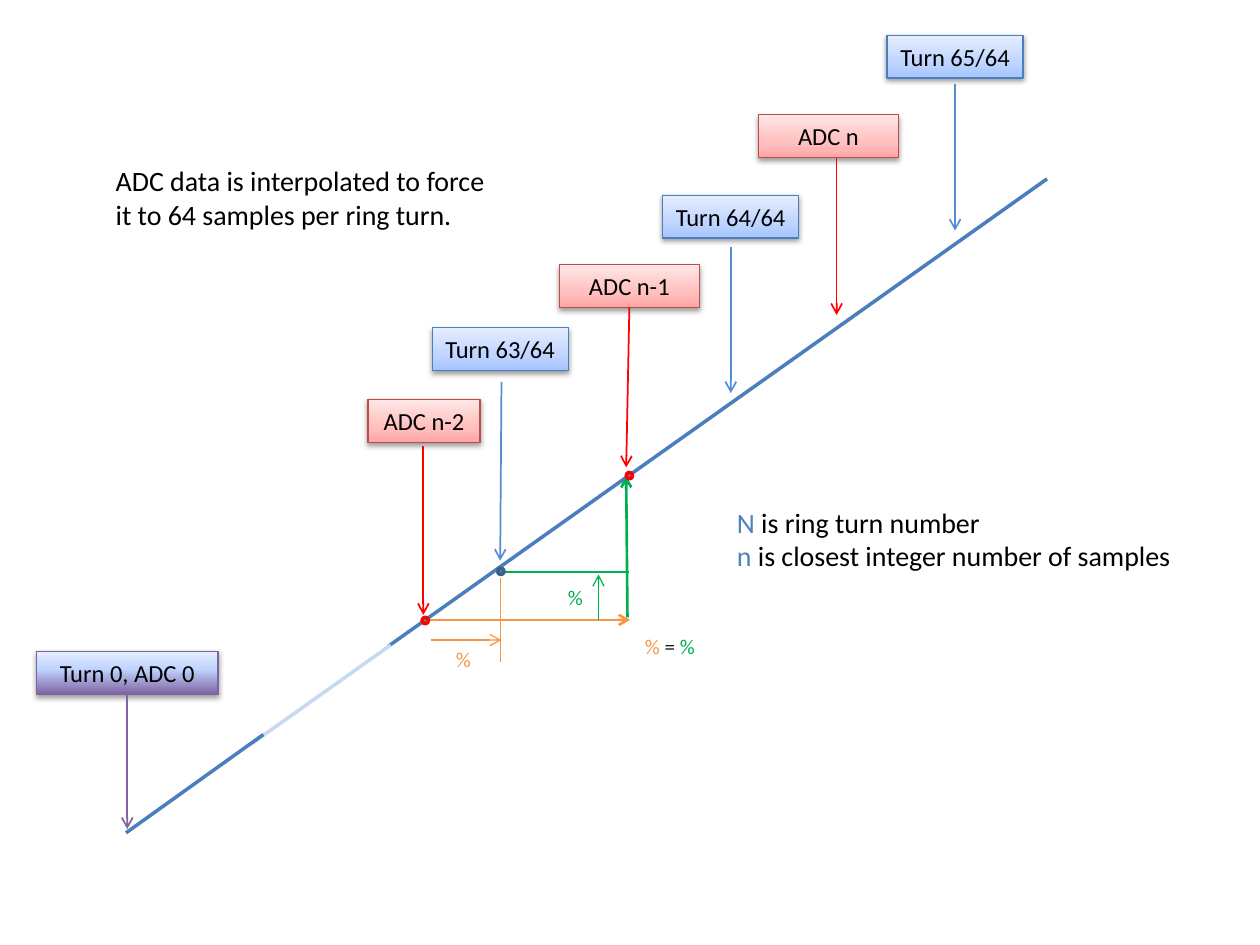
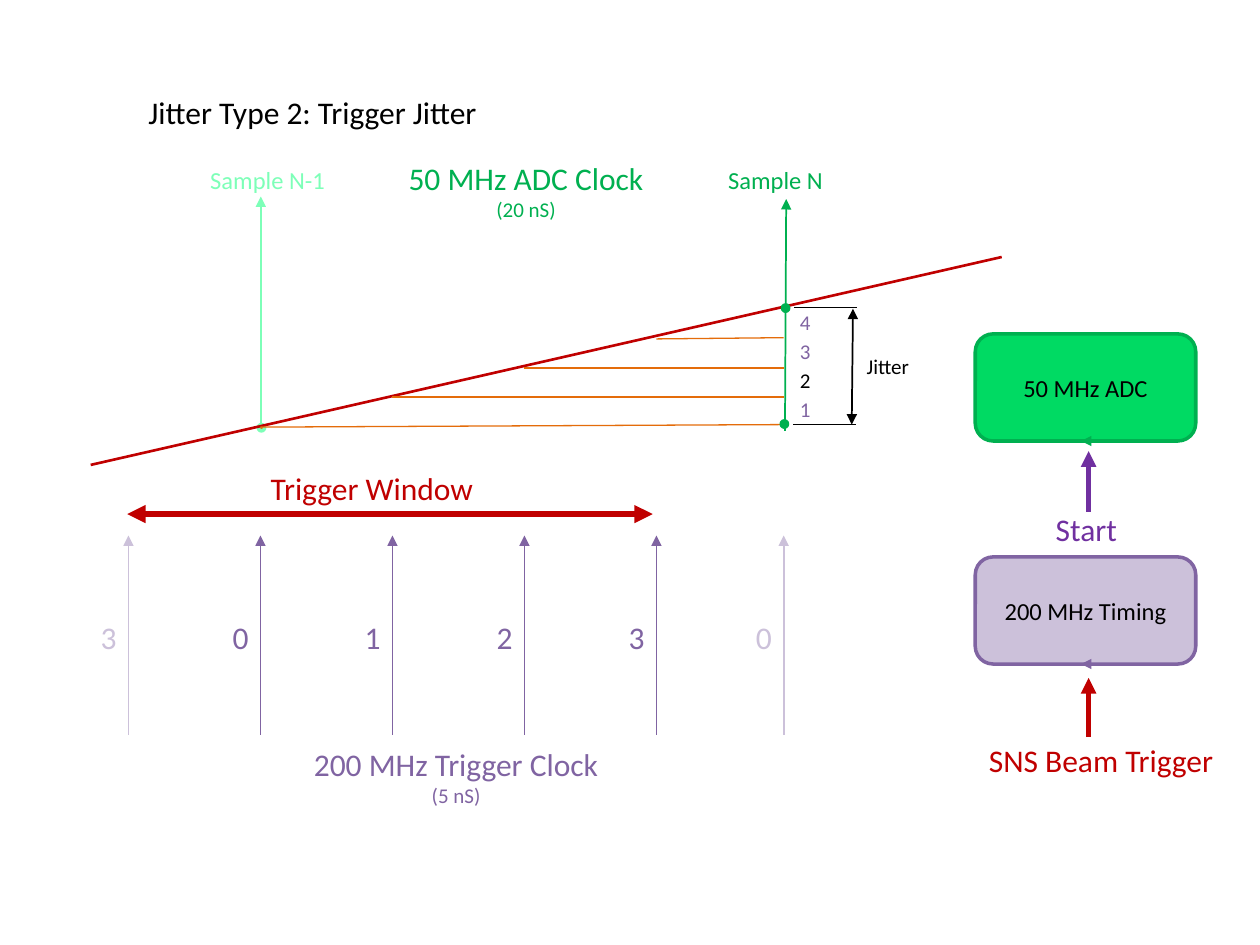
import pptx
import pptx.util
import pptx.dml.color
import pptx.enum.shapes
import pptx.enum.text
import pptx.oxml.ns
from lxml import etree

Inches = pptx.util.Inches
Pt = pptx.util.Pt
RGB = pptx.dml.color.RGBColor
SHAPE = pptx.enum.shapes.MSO_SHAPE
ALIGN = pptx.enum.text.PP_ALIGN
qn = pptx.oxml.ns.qn

# Shared style
FONT = "Calibri"
BLACK = RGB(0x00, 0x00, 0x00)
INK = RGB(0x1E, 0x1C, 0x11)
BLUE = RGB(0x4F, 0x81, 0xBD)
RAMP_BLUE = RGB(0x4B, 0x7E, 0xBC)
ARROW_BLUE = RGB(0x55, 0x8E, 0xD5)
DOT_BLUE = RGB(0x3A, 0x5F, 0x8C)
PALE_BLUE = RGB(0xC6, 0xD9, 0xF1)
RED = RGB(0xFF, 0x00, 0x00)
BOX_RED = RGB(0xBF, 0x4C, 0x48)
DARK_RED = RGB(0xC0, 0x00, 0x00)
ORANGE = RGB(0xF7, 0x96, 0x46)
DARK_ORANGE = RGB(0xE4, 0x6C, 0x0A)
GREEN = RGB(0x00, 0xB0, 0x50)
BRIGHT_GREEN = RGB(0x00, 0xDA, 0x63)
MINT = RGB(0x7D, 0xFF, 0xB8)
PURPLE = RGB(0x80, 0x64, 0xA2)
LILAC = RGB(0xCC, 0xC1, 0xDA)
VIOLET = RGB(0x70, 0x30, 0xA0)
DOT = 0.05

# Slide 1: callout styles are (outline, arrow colour, gradient from the bottom up)
CALLOUT_STYLES = {
    "turn": (RAMP_BLUE, ARROW_BLUE, [(0, "A4C4FF"), (35, "BFD4FF"), (100, "E6EEFF")]),
    "adc": (BOX_RED, RED, [(0, "FFA6A5"), (35, "FFC0BF"), (100, "FFE7E7")]),
    "start": (PURPLE, PURPLE, [(0, "8064A2"), (59, "BFD4FF"), (100, "E6EEFF")]),
}
# text, style, left, top, width, arrow start (None: joined to the box), arrow end
CALLOUTS = [
    ("Turn 0, ADC 0", "start", 0.29, 5.17, 1.44, None, (1.01, 6.58)),
    ("ADC n-2", "adc", 2.92, 3.17, 0.89, (3.36, 3.54), (3.36, 4.88)),
    ("Turn 63/64", "turn", 3.43, 2.6, 1.08, (3.98, 3.03), (3.97, 4.45)),
    ("ADC n-1", "adc", 4.44, 2.1, 1.11, None, (4.97, 3.71)),
    ("Turn 64/64", "turn", 5.26, 1.55, 1.08, (5.8, 1.96), (5.8, 3.12)),
    ("ADC n", "adc", 6.02, 0.91, 1.11, (6.64, 1.25), (6.64, 2.5)),
    ("Turn 65/64", "turn", 7.04, 0.28, 1.08, (7.58, 0.67), (7.58, 1.83)),
]
CALLOUT_HEIGHT = 0.34
# start, end, colour, width, head, tail
RAMP = [
    ((3.08, 5.13), (8.31, 1.42), RAMP_BLUE, 2),
    ((2, 5.9), (3.1, 5.12), PALE_BLUE, 2),
    ((1, 6.61), (2.09, 5.83), RAMP_BLUE, 2),
]
INTERPOLATION = [
    ((3.35, 4.92), (5, 4.92), ORANGE, 1.5, None, "arrow"),
    ((3.42, 5.08), (3.98, 5.08), ORANGE, 0.75, None, "arrow"),
    ((4.75, 4.56), (4.75, 4.92), GREEN, 0.75, "arrow"),
    ((4.97, 3.78), (4.98, 4.9), GREEN, 1.5, "arrow"),
    ((3.97, 4.59), (3.97, 5.25), ORANGE, 0.75),
    ((4, 4.54), (4.99, 4.54), GREEN, 0.75),
]
SAMPLE_DOTS = [
    (3.95, 4.51, BLUE, DOT_BLUE),
    (3.35, 4.9, BLUE, RED),
    (4.97, 3.75, BLUE, RED),
]
# left, top, width, height, paragraphs of (size, runs), alignment
INTERPOLATION_TEXTS = [
    (4.41, 4.59, 0.33, 0.3, [(12, [("%", GREEN)])]),
    (3.52, 5.08, 0.33, 0.3, [(12, [("%", ORANGE)])]),
    (5.02, 4.98, 0.64, 0.3, [(12, [("% ", ORANGE), ("= ", INK), ("%", GREEN)])]),
    (5.75, 3.96, 3.69, 0.64, [
        (16, [("N", BLUE), (" is ring turn number", BLACK)]),
        (16, [("n", BLUE), (" is closest integer number of samples", BLACK)])]),
    (0.82, 1.25, 3.17, 0.64, [
        (16, [("ADC data is interpolated to force", BLACK)]),
        (16, [("it to 64 samples per ring turn.", BLACK)])]),
]

# Slide 2: trigger clock ticks, the last one falling on sample N
TICKS = [("3", LILAC), ("0", PURPLE), ("1", PURPLE),
         ("2", PURPLE), ("3", PURPLE), ("0", LILAC)]
FIRST_TICK, FOURTH_TICK, SAMPLE_N = 1.02, 5.21, 6.22
TICK_TOP, TICK_BOTTOM = 4.25, 5.83
# label, colour, level at the ramp, level at sample N
JITTER_LEVELS = [
    ("1", PURPLE, 3.39, 3.37),
    ("2", BLACK, 3.15, 3.15),
    ("3", PURPLE, 2.92, 2.92),
    ("4", PURPLE, 2.69, 2.68),
]
JITTER_LABEL_TOP, JITTER_LABEL_STEP = 3.1, 0.23
SIGNALS = [
    ((2.07, 3.4), (2.07, 1.56), MINT, 1, None, "triangle"),
    ((0.72, 3.69), (7.95, 2.04), DARK_RED, 1.5),
    ((6.23, 3.42), (6.24, 1.58), GREEN, 1, None, "triangle"),
    ((1.01, 4.08), (5.18, 4.08), DARK_RED, 3.5, "triangle", "triangle"),
    ((6.76, 3.37), (6.77, 2.45), BLACK, 1, "triangle", "triangle"),
    ((6.8, 2.44), (6.3, 2.44), BLACK, 1),
    ((6.79, 3.37), (6.29, 3.37), BLACK, 1),
    ((8.64, 5.85), (8.64, 5.38), DARK_RED, 3, None, "triangle"),
    ((8.64, 4.06), (8.64, 3.58), VIOLET, 3, None, "triangle"),
]
RAMP_START_DOT = (2.05, 3.37, DARK_ORANGE, MINT)
JITTER_DOTS = [(6.21, 2.42, GREEN, GREEN), (6.2, 3.34, GREEN, GREEN)]
# text, top, fill, outline
DEVICES = [
    ("50 MHz ADC", 2.65, BRIGHT_GREEN, GREEN),
    ("200 MHz Timing", 4.42, LILAC, PURPLE),
]
DEVICE_LEFT, DEVICE_WIDTH, DEVICE_HEIGHT = 7.74, 1.75, 0.85
JITTER_TEXTS = [
    (1.08, 0.69, 2.85, 0.4, [(18, [("Jitter Type 2: Trigger Jitter", BLACK)])]),
    (1.57, 1.26, 1.12, 0.34, [(14, [("Sample N-1", MINT)])]),
    (5.68, 1.26, 0.96, 0.34, [(14, [("Sample N", GREEN)])]),
    (3.13, 1.21, 2.09, 0.61, [(18, [("50 MHz ADC Clock", GREEN)]),
                              (12, [("(20 nS)", GREEN)])], ALIGN.CENTER),
    (2.38, 5.86, 2.48, 0.61, [(18, [("200 MHz Trigger Clock", PURPLE)]),
                              (12, [("(5 nS)", PURPLE)])], ALIGN.CENTER),
    (2.05, 3.67, 1.83, 0.4, [(18, [("Trigger Window", DARK_RED)])]),
    (6.78, 2.76, 0.54, 0.3, [(12, [("Jitter", BLACK)])]),
    (8.28, 4, 0.69, 0.4, [(18, [("Start", VIOLET)])]),
    (7.75, 5.83, 2, 0.4, [(18, [("SNS Beam Trigger", DARK_RED)])]),
]


def write(frame, paragraphs, align=ALIGN.LEFT):
    frame.word_wrap = False
    for index, (size, runs) in enumerate(paragraphs):
        paragraph = frame.add_paragraph() if index else frame.paragraphs[0]
        paragraph.alignment = align
        paragraph.font.name = FONT
        paragraph.font.size = Pt(size)
        if len(runs) == 1:
            paragraph.font.color.rgb = runs[0][1]
        for text, color in runs:
            run = paragraph.add_run()
            run.text = text
            if len(runs) > 1:
                run.font.color.rgb = color


def add_text(slide, left, top, width, height, paragraphs, align=ALIGN.LEFT):
    box = slide.shapes.add_textbox(*map(Inches, (left, top, width, height)))
    write(box.text_frame, paragraphs, align)


def add_line(slide, start, end, color, width, head=None, tail=None):
    line = slide.shapes.add_connector(
        pptx.enum.shapes.MSO_CONNECTOR.STRAIGHT, *map(Inches, start + end))
    line.line.color.rgb = color
    line.line.width = Pt(width)
    properties = line.element.spPr
    for tag, arrow in (("a:headEnd", head), ("a:tailEnd", tail)):
        if arrow:
            etree.SubElement(properties.find(qn("a:ln")), qn(tag), type=arrow)
    etree.SubElement(properties, qn("a:effectLst"))
    return line


def add_box(slide, kind, left, top, width, height, fill, outline, weight):
    box = slide.shapes.add_shape(kind, *map(Inches, (left, top, width, height)))
    box.shadow.inherit = False
    if fill is not None:
        box.fill.solid()
        box.fill.fore_color.rgb = fill
    box.line.color.rgb = outline
    box.line.width = Pt(weight)
    return box


def add_dot(slide, left, top, fill, outline):
    add_box(slide, SHAPE.OVAL, left, top, DOT, DOT, fill, outline, 2)


def add_color(parent, tag, color, **attributes):
    holder = etree.SubElement(parent, qn(tag), **attributes)
    return etree.SubElement(holder, qn("a:srgbClr"), val=color)


def add_callout(slide, text, style, left, top, width, start, end):
    outline, arrow_color, stops = CALLOUT_STYLES[style]
    box = add_box(slide, SHAPE.RECTANGLE, left, top, width, CALLOUT_HEIGHT,
                  None, outline, 0.75)
    box.fill.gradient()
    box.fill.gradient_angle = 90
    properties = box.element.spPr
    stop_list = properties.find(".//" + qn("a:gsLst"))
    for stop in list(stop_list):
        stop_list.remove(stop)
    for percent, color in stops:
        add_color(stop_list, "a:gs", color, pos=str(percent * 1000))
    shadow = add_color(properties.find(qn("a:effectLst")), "a:outerShdw", "000000",
                       blurRad="40000", dist="20000", dir="5400000", rotWithShape="0")
    etree.SubElement(shadow, qn("a:alpha"), val="38000")
    write(box.text_frame, [(14, [(text, BLACK)])], ALIGN.CENTER)

    bottom_middle = (left + width / 2, top + CALLOUT_HEIGHT)
    arrow = add_line(slide, start or bottom_middle, end, arrow_color, 1, None, "arrow")
    if start is None:
        arrow.begin_connect(box, 2)


def build_interpolation(slide):
    for segment in RAMP:
        add_line(slide, *segment)
    for callout in CALLOUTS:
        add_callout(slide, *callout)
    for line in INTERPOLATION:
        add_line(slide, *line)
    for dot in SAMPLE_DOTS:
        add_dot(slide, *dot)
    for text in INTERPOLATION_TEXTS:
        add_text(slide, *text)


def build_trigger_jitter(slide):
    add_dot(slide, *RAMP_START_DOT)
    for signal in SIGNALS:
        add_line(slide, *signal)

    # Trigger clock
    step = (FOURTH_TICK - FIRST_TICK) / 4
    ticks = [min(FIRST_TICK + step * i, SAMPLE_N) for i in range(len(TICKS))]
    for x, (label, color) in zip(ticks, TICKS):
        add_line(slide, (x, TICK_BOTTOM), (x, TICK_TOP), color, 1, None, "triangle")
        add_text(slide, x - 0.32, 4.86, 0.33, 0.4, [(18, [(label, color)])])

    # Level reached at each trigger tick
    for i, (label, color, ramp_y, sample_y) in enumerate(JITTER_LEVELS):
        add_line(slide, (ticks[i + 1], ramp_y), (SAMPLE_N, sample_y), DARK_ORANGE, 0.75)
        add_text(slide, 6.25, JITTER_LABEL_TOP - i * JITTER_LABEL_STEP, 0.29, 0.3,
                 [(12, [(label, color)])])
    for dot in JITTER_DOTS:
        add_dot(slide, *dot)

    # Devices with their clock marks
    for text, top, fill, outline in DEVICES:
        device = add_box(slide, SHAPE.ROUNDED_RECTANGLE, DEVICE_LEFT, top,
                         DEVICE_WIDTH, DEVICE_HEIGHT, fill, outline, 2)
        write(device.text_frame, [(14, [(text, BLACK)])], ALIGN.CENTER)
        bottom = top + DEVICE_HEIGHT
        add_line(slide, (8.91, bottom), (8.58, bottom), outline, 1, None, "triangle")

    for text in JITTER_TEXTS:
        add_text(slide, *text)


def main():
    deck = pptx.Presentation()
    deck.slide_width, deck.slide_height = Inches(10), Inches(7.5)
    for build in (build_interpolation, build_trigger_jitter):
        build(deck.slides.add_slide(deck.slide_layouts[6]))
    deck.save("out.pptx")


if __name__ == "__main__":
    main()
